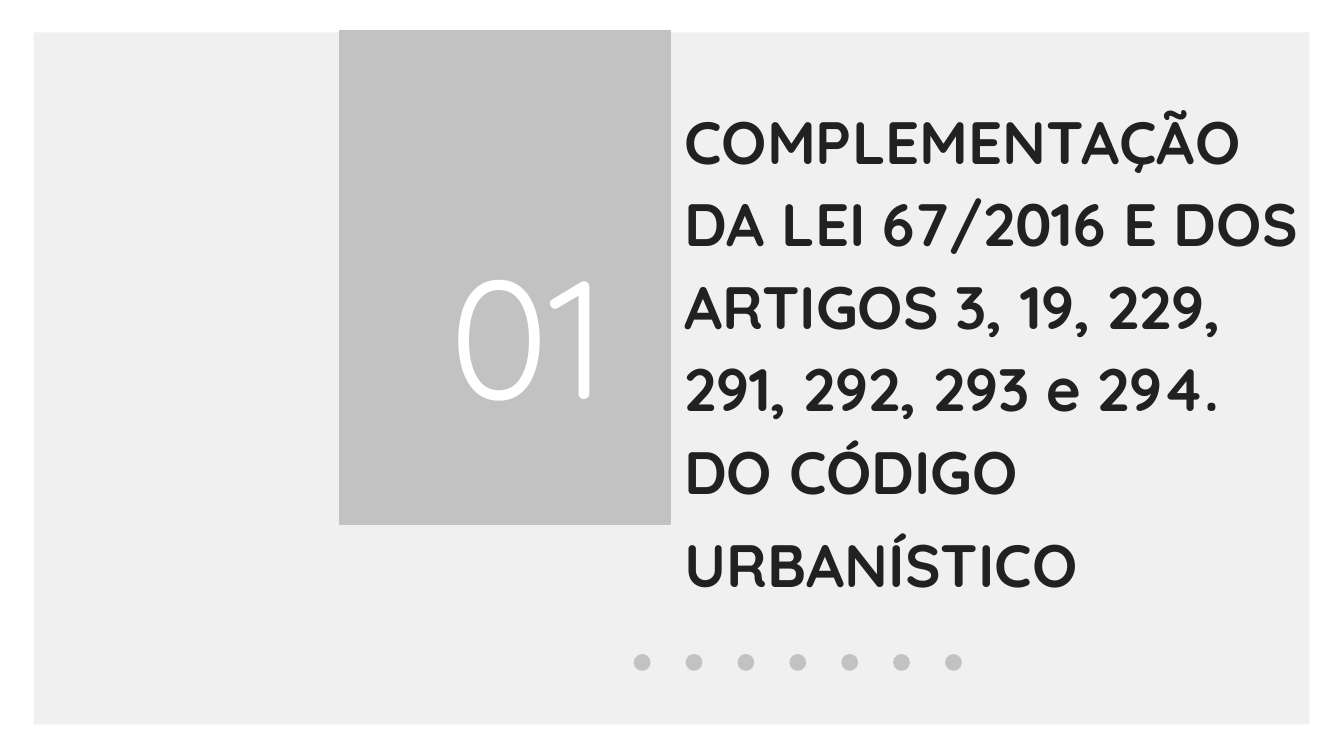
from pptx import Presentation
from pptx.dml.color import RGBColor
from pptx.enum.shapes import MSO_SHAPE as Kind
from pptx.enum.text import MSO_ANCHOR as Anchor, PP_ALIGN as Align
from pptx.util import Pt

FONT = "Quicksand"
GREY = "C2C2C2"
TITLE = ("COMPLEMENTAÇÃO DA LEI 67/2016 E DOS ARTIGOS 3, 19, 229, "
         "291, 292, 293 e 294. DO CÓDIGO URBANÍSTICO")


def color(code):
    """Turn a hex string into a colour."""
    return RGBColor.from_string(code)


def add_form(slide, kind, box, fill, line=None):
    """Add a filled shape, with an outline if a line colour is given."""
    form = slide.shapes.add_shape(kind, *map(Pt, box))
    form.shadow.inherit = False
    form.fill.solid()
    form.fill.fore_color.rgb = color(fill)
    if line:
        form.line.color.rgb = color(line)
        form.line.width = Pt(0.75)
    else:
        form.line.fill.background()


def add_text(slide, box, runs, code, align=Align.LEFT):
    """Add one paragraph from runs of text, size and weight."""
    frame = slide.shapes.add_textbox(*map(Pt, box)).text_frame
    frame.word_wrap = True
    frame.vertical_anchor = Anchor.TOP
    frame.margin_left = frame.margin_right = Pt(7.2)
    frame.margin_top = frame.margin_bottom = Pt(7.2)
    para = frame.paragraphs[0]
    para.alignment = align
    para.line_spacing = 1.15
    for text, size, bold in runs:
        run = para.add_run()
        run.text = text
        run.font.name = FONT
        run.font.size = Pt(size)
        run.font.bold = bold
        run.font.color.rgb = color(code)


def add_dots(slide, left, top, size, step, count):
    """Add an evenly spaced row of dots."""
    for i in range(count):
        add_form(slide, Kind.OVAL, (left + i * step, top, size, size), GREY)


def main():
    """Build the section slide and save it."""
    deck = Presentation()
    deck.slide_width, deck.slide_height = Pt(720), Pt(405)
    slide = deck.slides.add_slide(deck.slide_layouts[6])
    add_form(slide, Kind.RECTANGLE, (18, 17.3, 683.5, 370.8), "F0F0F0")
    add_text(slide, (359.5, 43.2, 351.4, 181.4),
             [(TITLE, 32, True), (" ", 37, False)], "212121")
    add_dots(slide, 339.5, 350.4, 9, 27.8, 7)
    add_form(slide, Kind.RECTANGLE, (181.8, 16.5, 177.1, 264.3), GREY, GREY)
    add_text(slide, (209.5, 100.8, 121.7, 95.8),
             [("01", 90, False)], "FFFFFF", Align.RIGHT)
    deck.save("out.pptx")


if __name__ == "__main__":
    main()
